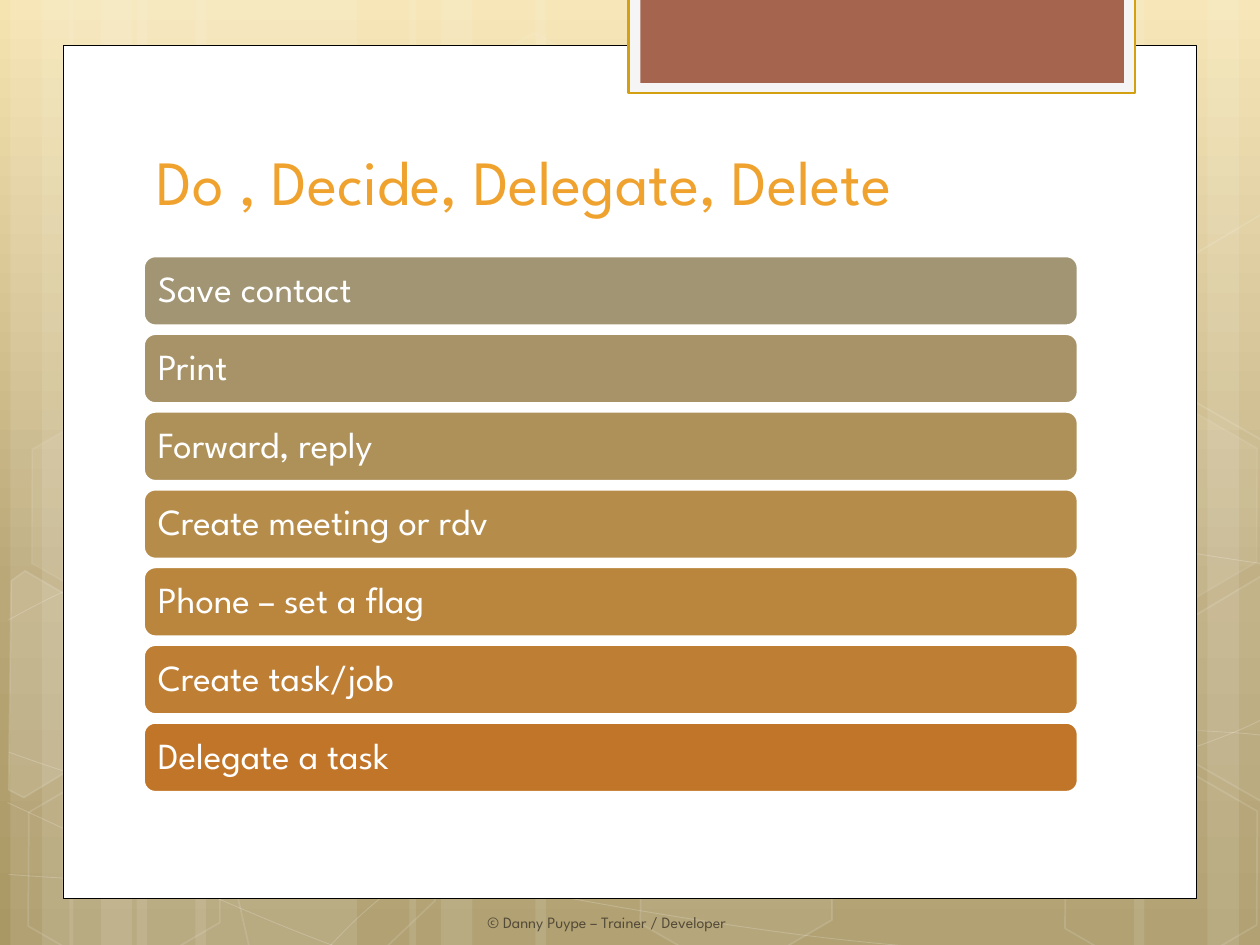
from lxml.etree import SubElement
from pptx import Presentation
from pptx.dml.color import RGBColor
from pptx.enum.shapes import MSO_SHAPE
from pptx.enum.text import MSO_ANCHOR, PP_ALIGN
from pptx.oxml.ns import qn
from pptx.util import Pt

WHITE = RGBColor(0xFF, 0xFF, 0xFF)
BLACK = RGBColor(0x00, 0x00, 0x00)
PALE = RGBColor(0xF5, 0xF5, 0xF5)
GOLD = RGBColor(0xD2, 0xA0, 0x10)
RUST = RGBColor(0xA5, 0x64, 0x4E)
ORANGE = RGBColor(0xF0, 0xA2, 0x2E)
BROWN = RGBColor(0x53, 0x4B, 0x38)
FONT = "League Spartan"
W, H = 720, 540

BACKDROP = [(0, "F6E4B0"), (62, "BAA878"), (100, "A99764")]
STRIPS = [(78, 126), (6, 36), (24, 60), (111.6, 126), (39.6, 36), (57.6, 60),
          (528, 126), (690, 36), (648, 60), (306, 222), (234, 36), (252, 60)]
CURVES = [
    [(5, 499.7), (43.9, 502.6), (82.8, 504.7), (136.8, 504), (190.8, 502.6),
     (257.8, 501.8), (329.8, 493.9), (401.8, 486.7), (504, 472.3),
     (570.2, 458.6), (635.8, 444.2), (703.4, 421.9), (725, 409)],
    [(5, 354.2), (25.9, 342.7), (46.8, 331.2), (87.1, 320.4), (128.2, 309.6),
     (186.5, 293), (249.8, 287.3), (313.9, 282.2), (391.7, 281.5),
     (470.9, 287.3), (550.1, 293.8), (681.8, 316.8), (725, 322.6)],
    [(4.3, 458.6), (91.4, 499), (177.8, 540), (240.5, 556.6)],
    [(5, 429.8), (27.4, 437.8), (50.4, 445.7), (92.2, 457.2), (133.9, 469.4),
     (196.6, 487.4), (257, 499.7), (316.8, 512.6), (392.4, 525.6),
     (452.2, 533.5), (511.9, 541.4), (576, 545), (614.2, 547.2),
     (651.6, 549.4), (661.7, 548.6), (680.4, 547.9), (699.1, 547.9),
     (712.1, 546.5), (725, 545)],
    [(174.2, 556.6), (187.2, 542.2), (200.2, 527), (217.4, 513.4),
     (234.7, 499.7), (259.2, 485.3), (279.4, 475.2), (299.5, 464.4),
     (311.8, 460.1), (338.4, 452.9), (364.3, 445), (412.6, 434.2),
     (437.8, 429.8), (463.7, 424.8), (467.3, 424.8), (489.6, 422.6),
     (511.9, 420.5), (547.2, 419), (571.7, 417.6), (596.9, 416.9),
     (637.9, 417.6), (637.9, 417.6), (637.9, 417.6), (686.2, 417.6),
     (686.2, 417.6), (699.1, 418.3), (711.4, 419), (717.8, 419.8),
     (724.3, 420.5), (722.2, 420.5), (724.3, 420.5)],
]
HEXAGONS = [(240.5, 26.6, 30, 4, 8), (357.8, 437.8, 30, 6, 12),
            (8, 439.2, 30, None, 12), (10, 231.8, 30, 7, 8),
            (125.3, 440, 16.7, None, 12), (542.2, 337, 30, 10, 12),
            (600.5, 440.6, 30, None, 12), (600.5, 233.3, 30, 7, 8)]
CUT_HEXAGONS = [
    ([(6.5, 331.9), (14.4, 326.2), (69.8, 358.6), (68.4, 422.6),
      (13.7, 455.8), (5, 451.4)], 10),
    ([(666.7, 361.4), (722.2, 328.3), (727.2, 331.9), (725.8, 455),
      (720.7, 457.9), (665.3, 426.2)], 4),
    ([(666.7, 154.8), (722.2, 121.7), (727.9, 125.3), (725.8, 248.4),
      (720.7, 251.3), (665.3, 219.6)], None),
]
ACTIONS = [("Save contact", "A19574"), ("Print", "A79367"),
           ("Forward, reply", "AE9159"), ("Create meeting or rdv", "B58C4A"),
           ("Phone – set a flag", "BA863E"), ("Create task/job", "BE7E33"),
           ("Delegate a task", "C17529")]


def set_alpha(fill, percent):
    """Make a solid white fill with the given opacity."""
    fill.solid()
    fill.fore_color.rgb = WHITE
    clr = fill._xPr.find(qn("a:solidFill"))[0]
    SubElement(clr, qn("a:alpha")).set("val", str(percent * 1000))


def style_veil(sp, fill=None, line=None, width=1):
    """Give a shape translucent white fill and line, or none."""
    sp.shadow.inherit = False
    for part, percent in ((sp.fill, fill), (sp.line.fill, line)):
        if percent is None:
            part.background()
        else:
            set_alpha(part, percent)
    if line is not None:
        sp.line.width = Pt(width)


def add_box(s, kind, box, fill, line=None, width=1):
    """Add a preset shape with solid fill and optional line."""
    sp = s.shapes.add_shape(kind, *map(Pt, box))
    sp.shadow.inherit = False
    sp.fill.solid()
    sp.fill.fore_color.rgb = fill
    if line is None:
        sp.line.fill.background()
    else:
        sp.line.color.rgb = line
        sp.line.width = Pt(width)
    return sp


def add_outline(s, points, close):
    """Build a freeform through points."""
    pts = [(Pt(x), Pt(y)) for x, y in points]
    fb = s.shapes.build_freeform(*pts[0])
    fb.add_line_segments(pts[1:], close=close)
    return fb.convert_to_shape()


def add_curve(s, points):
    """Build an open freeform of cubic Bézier segments."""
    sp = add_outline(s, points, False)
    outline = sp.element.xpath(".//a:custGeom/a:pathLst/a:path")[0]
    legs = outline.findall(qn("a:lnTo"))
    for i in range(0, len(legs), 3):
        bend = SubElement(outline, qn("a:cubicBezTo"))
        for leg in legs[i:i + 3]:
            bend.append(leg[0])
            outline.remove(leg)
    return sp


def write(sp, text, size, color, anchor, left=7.2, spacing=None):
    """Write one left-aligned line of text into a shape."""
    tf = sp.text_frame
    p = tf.paragraphs[0]
    r = p.add_run()
    r.text = text
    formats = [(tf, {"word_wrap": True, "vertical_anchor": anchor, "margin_left": Pt(left)}),
               (p, {"alignment": PP_ALIGN.LEFT, "line_spacing": spacing}),
               (r.font, {"name": FONT, "size": Pt(size)}),
               (r.font.color, {"rgb": color})]
    for target, values in formats:
        for key, value in values.items():
            setattr(target, key, value)


def add_backdrop(s, box):
    """Place the gradient, light strips, curves and hexagons."""
    x, y, w, h = box
    fill = s.background.fill
    fill.gradient()
    fill.gradient_angle = 270
    stops = s.element.xpath(".//p:bg//a:gsLst")[0]
    for stop in list(stops):
        stops.remove(stop)
    for pos, color in BACKDROP:
        stop = SubElement(stops, qn("a:gs"), pos=str(pos * 1000))
        SubElement(stop, qn("a:srgbClr"), val=color)
    for left, width in STRIPS:
        strip = s.shapes.add_shape(MSO_SHAPE.RECTANGLE, Pt(x + left), Pt(y), Pt(width), Pt(h))
        style_veil(strip, fill=10)
    for curve in CURVES:
        points = [(x + px, y + py) for px, py in curve]
        style_veil(add_curve(s, points), line=20, width=0.5)
    for left, top, angle, opacity, line in HEXAGONS:
        sp = s.shapes.add_shape(MSO_SHAPE.HEXAGON, Pt(x + left), Pt(y + top), Pt(126), Pt(113))
        sp.adjustments[0] = 0.285
        sp.rotation = angle
        style_veil(sp, opacity, line)
    for corners, opacity in CUT_HEXAGONS:
        points = [(x + px, y + py) for px, py in corners]
        style_veil(add_outline(s, points, True), opacity, 12)


def add_panel(s, box):
    """Place the white panel and the tab hanging over its top edge."""
    x, y, w, h = box
    add_box(s, MSO_SHAPE.RECTANGLE, box, WHITE, BLACK, 0.5)
    add_box(s, MSO_SHAPE.RECTANGLE, (x + 323.2, y - 27.4, 289.6, 54.7), PALE, GOLD, 1.25)
    add_box(s, MSO_SHAPE.RECTANGLE, (x + 330, y - 27.4, 276.2, 48.8), RUST)


def add_label(s, box, text, size, color, anchor):
    """Place a line of text in its own box."""
    write(s.shapes.add_textbox(*map(Pt, box)), text, size, color, anchor)


def add_actions(s, box, gap=4.8):
    """Stack the action bars evenly in the box."""
    x, y, w, h = box
    height = (h - gap * (len(ACTIONS) - 1)) / len(ACTIONS)
    for i, (text, color) in enumerate(ACTIONS):
        bar = (x, y + i * (height + gap), w, height)
        sp = add_box(s, MSO_SHAPE.ROUNDED_RECTANGLE, bar, RGBColor.from_string(color), WHITE, 1.25)
        write(sp, text, 21, WHITE, MSO_ANCHOR.MIDDLE, left=6.1, spacing=0.9)


def main():
    """Build and save the slide."""
    prs = Presentation()
    prs.slide_width, prs.slide_height = Pt(W), Pt(H)
    s = prs.slides.add_slide(prs.slide_layouts[6])
    add_backdrop(s, (0, 0, W, H))
    add_panel(s, (36, 26, 648, 487.2))
    add_label(s, (271.4, 518, 177, 18), "© Danny Puype – Trainer / Developer",
              9, BROWN, MSO_ANCHOR.TOP)
    add_actions(s, (82.2, 146.4, 533.7, 306.2))
    add_label(s, (82.3, 80.6, 553, 47.5), "Do , Decide, Delegate, Delete",
              36, ORANGE, MSO_ANCHOR.BOTTOM)
    prs.save("out.pptx")


if __name__ == "__main__":
    main()
